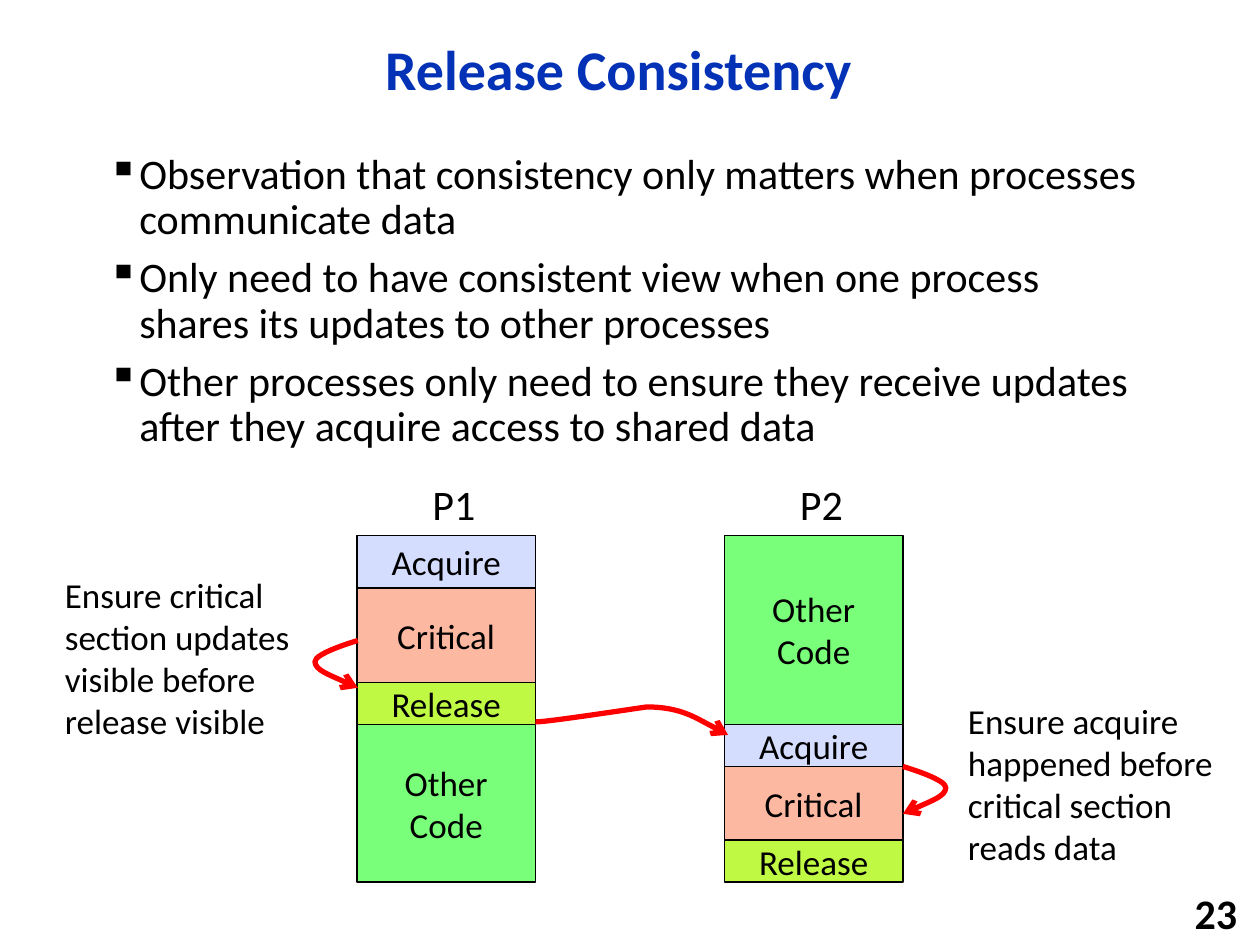
from dataclasses import dataclass

from lxml.etree import SubElement
from pptx import Presentation
from pptx.dml.color import RGBColor
from pptx.enum.shapes import MSO_SHAPE as Shape
from pptx.enum.text import MSO_ANCHOR as Anchor, PP_ALIGN as Align
from pptx.oxml.ns import qn
from pptx.util import Pt

COLOURS = {
    "title": "0332B7", "ink": "000000", "arrow": "FF0000",
    "Acquire": "D4DDFE", "Critical": "FDB8A2",
    "Release": "BFF944", "Other Code": "79FF79",
}
FONT = "Calibri"
STACK_TOP, STACK_WIDTH = 306, 102


@dataclass
class Process:
    name: str
    left: float
    phases: list[tuple[str, float]]  # label, height


@dataclass
class Note:
    text: str
    box: tuple[float, float, float, float]


PROCESSES = [
    Process("P1", 204, [("Acquire", 30), ("Critical", 54),
                        ("Release", 24), ("Other Code", 90)]),
    Process("P2", 414, [("Other Code", 108), ("Acquire", 24),
                        ("Critical", 42), ("Release", 24)]),
]
NOTES = [
    Note("Ensure critical section updates visible before release visible",
         (30, 324, 150, 104.4)),
    Note("Ensure acquire happened before critical section reads data",
         (546, 396, 162, 104.4)),
]
OBSERVATIONS = [
    "Observation that consistency only matters when processes communicate data",
    "Only need to have consistent view when one process shares its updates to other processes",
    "Other processes only need to ensure they receive updates after they acquire access to shared data",
]
HOOK = [(0, 0), (3.5, 1), (24.5, 7.5), (24.5, 12), (24.5, 17), (0, 27), (0, 27)]
RELEASE_TO_ACQUIRE = [(306, 412.5), (309.5, 413), (349, 407), (369.5, 404),
                      (389.5, 404), (416, 420), (416, 420)]


def rgb(name: str) -> RGBColor:
    return RGBColor.from_string(COLOURS[name])


def write(shape, *paragraphs: str, size=20, colour="ink", bold=False,
          align=Align.LEFT, anchor=Anchor.TOP, wrap=True, inset=3.6,
          spacing=None, before=None, bullet=None) -> None:
    """Fill a shape with one formatted paragraph per string."""
    frame = shape.text_frame
    frame.word_wrap, frame.vertical_anchor = wrap, anchor
    frame.margin_left = frame.margin_right = Pt(7.2)
    frame.margin_top = frame.margin_bottom = Pt(inset)
    for index, text in enumerate(paragraphs):
        paragraph = frame.add_paragraph() if index else frame.paragraphs[0]
        paragraph.alignment, paragraph.line_spacing = align, spacing
        if before:
            paragraph.space_before = Pt(before)
        if bullet:
            properties = paragraph._p.get_or_add_pPr()
            properties.set("marL", str(Pt(18)))
            properties.set("indent", str(Pt(-18)))
            SubElement(properties, qn("a:buChar"), char=bullet)
        run = paragraph.add_run()
        run.text = text
        run.font.name, run.font.size, run.font.bold = FONT, Pt(size), bold
        run.font.color.rgb = rgb(colour)


def add_text(slide, box: tuple, *paragraphs: str, **style) -> None:
    write(slide.shapes.add_textbox(*map(Pt, box)), *paragraphs, **style)


def add_process(slide, process: Process) -> None:
    add_text(slide, (process.left + 36, STACK_TOP - 36, 39.6, 36),
             process.name, size=24, wrap=False)
    top = STACK_TOP
    for label, height in process.phases:
        phase = slide.shapes.add_shape(
            Shape.RECTANGLE, Pt(process.left), Pt(top), Pt(STACK_WIDTH), Pt(height))
        phase.shadow.inherit = False
        phase.fill.solid()
        phase.fill.fore_color.rgb = rgb(label)
        phase.line.color.rgb, phase.line.width = rgb("ink"), Pt(1)
        write(phase, label, align=Align.CENTER, anchor=Anchor.MIDDLE, inset=7.2)
        top += height


def add_curved_arrow(slide, points: list[tuple[float, float]]) -> None:
    """Draw cubic Béziers: a start point, then three points per segment."""
    start, *controls = [(Pt(x), Pt(y)) for x, y in points]
    builder = slide.shapes.build_freeform(*start)
    builder.add_line_segments(controls, close=False)
    arrow = builder.convert_to_shape()
    arrow.shadow.inherit = False
    arrow.fill.background()
    arrow.line.color.rgb, arrow.line.width = rgb("arrow"), Pt(3)
    SubElement(arrow.line._get_or_add_ln(), qn("a:tailEnd"), type="arrow")

    segments = list(arrow._element.iter(qn("a:lnTo")))
    outline = segments[0].getparent()
    for first in range(0, len(segments), 3):
        curve = SubElement(outline, qn("a:cubicBezTo"))
        for segment in segments[first:first + 3]:
            curve.append(segment[0])
            outline.remove(segment)


def hook(x: float, y: float, direction: int) -> list[tuple[float, float]]:
    return [(x + direction * dx, y + dy) for dx, dy in HOOK]


def main() -> None:
    deck = Presentation()
    deck.slide_width, deck.slide_height = Pt(720), Pt(540)
    slide = deck.slides.add_slide(deck.slide_layouts[6])

    add_text(slide, (66, 12, 575, 58.5), "Release Consistency", size=32,
             colour="title", bold=True, align=Align.CENTER,
             anchor=Anchor.MIDDLE, spacing=0.9)
    add_text(slide, (54.5, 84, 605, 398), *OBSERVATIONS, size=24,
             spacing=0.9, before=7.2, bullet="▪")
    add_text(slide, (564, 510, 150, 23), "23", size=24, bold=True,
             align=Align.RIGHT, anchor=Anchor.MIDDLE)

    for process in PROCESSES:
        add_process(slide, process)
    for points in (hook(204.5, 366, -1), hook(516, 438, 1), RELEASE_TO_ACQUIRE):
        add_curved_arrow(slide, points)
    for note in NOTES:
        add_text(slide, note.box, note.text)

    deck.save("out.pptx")


if __name__ == "__main__":
    main()
